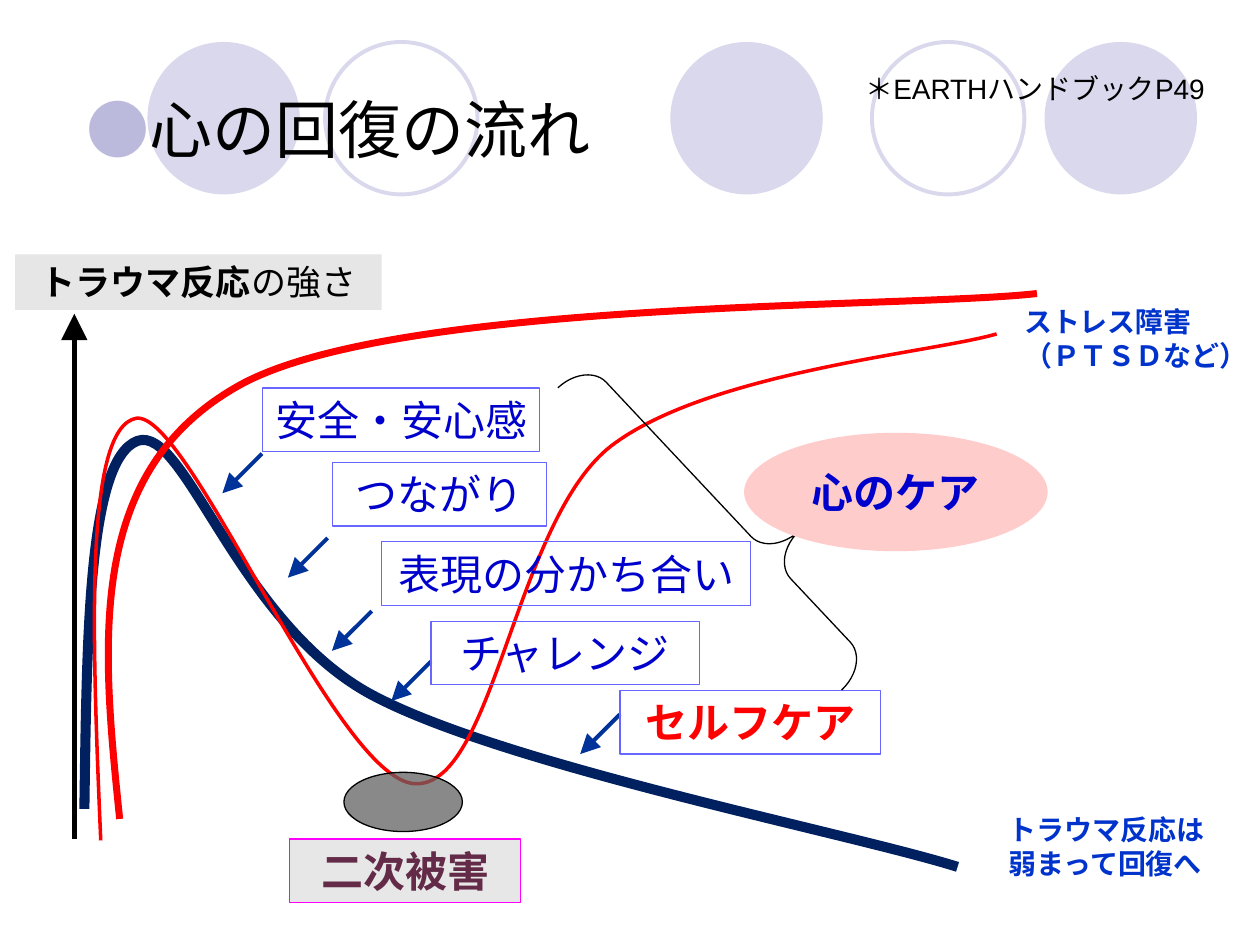
import pptx
import pptx.dml.color
import pptx.enum.shapes
import pptx.enum.text
import pptx.oxml.ns
import pptx.util
import lxml.etree

SHAPE = pptx.enum.shapes.MSO_SHAPE
ALIGN = pptx.enum.text.PP_ALIGN
ANCHOR = pptx.enum.text.MSO_ANCHOR
qn = pptx.oxml.ns.qn
rgb = pptx.dml.color.RGBColor.from_string
GOTHIC = "Noto Sans CJK JP"

deck = pptx.Presentation()
deck.slide_width = pptx.util.Inches(10)
deck.slide_height = pptx.util.Inches(7.5)
page = deck.slides.add_slide(deck.slide_layouts[5])

# The slide is a grid of 100 columns by 75 rows; all places below count cells.
column = deck.slide_width / 100
row = deck.slide_height / 75


def paint(shape, fill=None, line=None, width=0.75, opacity=None):
    """Set fill, outline and shadow; None leaves fill or outline out."""
    shape.shadow.inherit = False
    for target, colour in ((shape.fill, fill), (shape.line.fill, line)):
        if colour is None:
            target.background()
        else:
            target.solid()
            target.fore_color.rgb = rgb(colour)
    if line:
        shape.line.width = pptx.util.Pt(width)
    if opacity:
        colour_node = shape.element.spPr.find(qn("a:solidFill"))[0]
        lxml.etree.SubElement(colour_node, qn("a:alpha"), val=str(opacity * 1000))


def write(box, lines, size, colour, bold=False, align=ALIGN.CENTER, latin=GOTHIC,
          anchor=ANCHOR.TOP):
    """Fill a box with one paragraph per line; a line is a list of runs."""
    frame = box.text_frame
    frame.word_wrap = True
    frame.vertical_anchor = anchor
    for number, texts in enumerate(lines):
        para = frame.add_paragraph() if number else frame.paragraphs[0]
        para.alignment = align
        para.font.size = pptx.util.Pt(size)
        para.font.bold = bold
        para.font.name = latin
        para.font.color.rgb = rgb(colour)
        east_asian = lxml.etree.Element(qn("a:ea"), typeface=GOTHIC)
        para.font.fill  # fill sits before the typefaces
        para._p.find(".//" + qn("a:latin")).addnext(east_asian)
        for text in texts:
            para.add_run().text = text


# Header circles, with the title above them
for left, filled in ((53.2, True), (82.9, True), (11.7, True), (69.2, False), (25.8, False)):
    circle = page.shapes.add_shape(SHAPE.OVAL, left * column, 3.33 * row,
                                   12.1 * column, 12.1 * row)
    if filled:
        paint(circle, fill="D9D8EC")
    else:
        paint(circle, line="D9D8EC", width=2.25)

title = page.shapes.title
title.left, title.top = int(5.9 * column), int(6.35 * row)
title.width, title.height = int(89.3 * column), int(7.7 * row)
write(title, [["●", "心の回復の流れ"]], 36, "000000", align=ALIGN.LEFT, anchor=ANCHOR.MIDDLE)
title.text_frame.auto_size = pptx.enum.text.MSO_AUTO_SIZE.NONE
title.text_frame.paragraphs[0].runs[0].font.color.rgb = rgb("BBBADD")
title.element.getparent().append(title.element)

# Reaction curves: a start point, then two control points and an end per Bezier piece
curves = [
    ("002060", 5.75, [(6.7, 64.2), (6.9, 50.4), (7, 36.5), (10.9, 35), (14.7, 33.6),
                      (18.9, 49.7), (29.8, 55.3), (40.6, 60.9), (67.4, 66.1), (76, 68.8)]),
    ("FF0000", 2, [(8, 66.7), (7.3, 50.3), (6.7, 34), (10.8, 33.2), (15, 32.5),
                   (26.6, 61.8), (32.9, 62.2), (39.2, 62.6), (40.8, 41.4), (48.5, 35.4),
                   (56.2, 29.5), (74, 28), (79.1, 26.5)]),
    ("FF0000", 4, [(9.5, 65), (8.1, 51.3), (6.7, 37.6), (18.8, 30.7), (30.9, 23.7),
                   (71.8, 24.5), (82.3, 23.3)]),
]
for colour, width, knots in curves:
    points = [(x * column, y * row) for x, y in knots]
    builder = page.shapes.build_freeform(*points[0])
    builder.add_line_segments(points[1:], close=False)
    curve = builder.convert_to_shape()
    paint(curve, line=colour, width=width)
    path_node = curve.element.spPr.find(".//" + qn("a:path"))
    segments = path_node.findall(qn("a:lnTo"))
    for first in range(0, len(segments), 3):
        bezier = lxml.etree.SubElement(path_node, qn("a:cubicBezTo"))
        for segment in segments[first:first + 3]:
            bezier.append(segment[0])
            path_node.remove(segment)

# Vertical axis, and one short arrow from each stage of care
arrows = [((5.9, 66.6), (5.9, 24.9), "000000", 3)]
for x, y in ((20.8, 36), (26, 42.7), (29.5, 48.5), (34.2, 52.5), (49.2, 56.7)):
    arrows.append(((x, y), (x - 3.15, y + 3.15), "003399", 2.25))
for start, end, colour, width in arrows:
    arrow = page.shapes.add_connector(
        pptx.enum.shapes.MSO_CONNECTOR.STRAIGHT,
        int(start[0] * column), int(start[1] * row), int(end[0] * column), int(end[1] * row))
    arrow.line.color.rgb = rgb(colour)
    arrow.line.width = pptx.util.Pt(width)
    lxml.etree.SubElement(arrow.element.spPr.find(qn("a:ln")), qn("a:tailEnd"),
                          type="triangle", w="lg", len="lg")
    lxml.etree.SubElement(arrow.element.spPr, qn("a:effectLst"))

axis_label = page.shapes.add_shape(SHAPE.RECTANGLE, 1.2 * column, 20.2 * row,
                                   29.1 * column, 4.4 * row)
paint(axis_label, fill="E6E6E6")
write(axis_label, [["トラウマ反応", "の強さ"]], 20, "000000")
axis_label.text_frame.paragraphs[0].runs[0].font.bold = True

# Secondary harm at the low point of the thin curve
harm = page.shapes.add_shape(SHAPE.RECTANGLE, 23 * column, 66.6 * row, 18.3 * column, 5.05 * row)
paint(harm, fill="E6E6E6", line="FF00FF", opacity=95)
write(harm, [["二次被害"]], 24, "632B48", bold=True)
low_point = page.shapes.add_shape(SHAPE.OVAL, 27.3 * column, 61.3 * row, 9.4 * column, 4.7 * row)
paint(low_point, fill="606060", line="000000", opacity=74)

# Stages of care, gathered by a brace
stages = [
    ("安全・安心感", 20.85, 30.8, 22, "0000CC", False),
    ("つながり", 26.4, 36.7, 17, "0000CC", False),
    ("表現の分かち合い", 30.3, 43, 29.3, "0000CC", False),
    ("チャレンジ", 34.2, 49.3, 21.3, "0000CC", False),
    ("セルフケア", 49.2, 54.8, 20.7, "FF0000", True),
]
for text, left, top, width, colour, bold in stages:
    stage = page.shapes.add_shape(SHAPE.RECTANGLE, left * column, top * row,
                                  width * column, 5.05 * row)
    paint(stage, line="6767FF")
    write(stage, [[text]], 24, colour, bold)

brace = page.shapes.add_shape(SHAPE.RIGHT_BRACE, 54.7 * column, 24.2 * row,
                              6.2 * column, 32.9 * row)
brace.adjustments[0] = 0.37
brace.adjustments[1] = 0.65
brace.rotation = 316.8
paint(brace, line="000000")

care = page.shapes.add_shape(SHAPE.OVAL, 59.05 * column, 34.35 * row, 24.1 * column, 9.4 * row)
paint(care, fill="FFCCCC")
write(care, [["心のケア"]], 24, "0000CC", bold=True, anchor=ANCHOR.MIDDLE)
care.text_frame.word_wrap = False

# Captions
captions = [
    (["ストレス障害", "（ＰＴＳＤなど）"], 80.3, 23.7, 21.3, 6.4, "0033CC", True),
    (["トラウマ反応は", "弱まって回復へ"], 79.1, 64, 18.6, 6.4, "0033CC", True),
    (["＊EARTHハンドブックP49"], 67.7, 5.2, 29.1, 3.7, "000000", False),
]
for texts, left, top, width, height, colour, bold in captions:
    caption = page.shapes.add_textbox(left * column, top * row, width * column, height * row)
    write(caption, [[text] for text in texts], 16, colour, bold, ALIGN.LEFT, "Arial")

deck.save("out.pptx")
